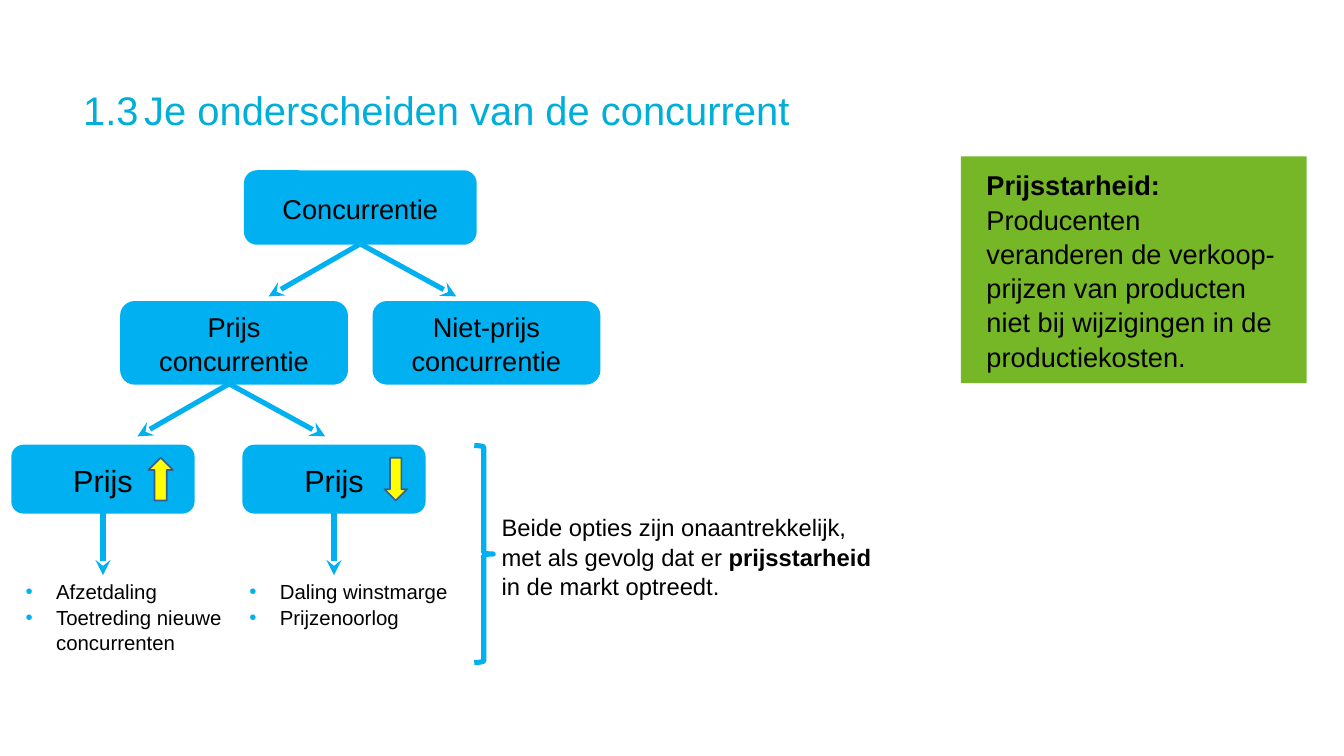
from dataclasses import dataclass

from lxml.etree import SubElement
from pptx import Presentation
from pptx.dml.color import RGBColor
from pptx.enum.shapes import MSO_CONNECTOR as Connector, MSO_SHAPE as Shape
from pptx.enum.text import MSO_ANCHOR as Anchor, MSO_AUTO_SIZE as AutoSize, PP_ALIGN as Align
from pptx.oxml.ns import qn
from pptx.util import Inches, Pt


@dataclass(frozen=True)
class Theme:
    font: str = "Arial"
    title: str = "00AEDA"
    blue: str = "00B0F0"
    green: str = "76B728"
    yellow: str = "FFFF00"
    outline: str = "395E89"
    ink: str = "000000"
    title_pt: int = 47
    price_pt: int = 36
    box_pt: int = 32
    note_pt: int = 28
    bullet_pt: int = 24
    line_pt: int = 6
    border_pt: int = 2
    leading: float = 1.05


T = Theme()


def apply(obj, formats):
    for name, value in formats.items():
        setattr(obj, name, value)


def write(sp, paragraphs, size, color=T.ink, align=Align.LEFT, anchor=Anchor.TOP,
          inset=(0.1, 0.05), tab=None, bullets=False, grow=False):
    tf = sp.text_frame
    dx, dy = map(Inches, inset)
    apply(tf, dict(word_wrap=True, vertical_anchor=anchor, margin_left=dx,
                   margin_right=dx, margin_top=dy, margin_bottom=dy,
                   auto_size=AutoSize.SHAPE_TO_FIT_TEXT if grow else AutoSize.NONE))
    for i, runs in enumerate(paragraphs):
        p = tf.add_paragraph() if i else tf.paragraphs[0]
        apply(p, dict(alignment=align, line_spacing=T.leading))
        pPr = p._p.get_or_add_pPr()
        if bullets:
            pPr.set("marL", str(Inches(0.5)))
            pPr.set("indent", str(Inches(-0.5)))
            SubElement(SubElement(pPr, qn("a:buClr")), qn("a:srgbClr"), val=T.blue)
            SubElement(pPr, qn("a:buFont"), typeface=T.font)
            SubElement(pPr, qn("a:buChar"), char="•")
        if tab:
            tabs = SubElement(pPr, qn("a:tabLst"))
            SubElement(tabs, qn("a:tab"), pos=str(Inches(tab)), algn="l")
        for text, bold in runs:
            r = p.add_run()
            r.text = text
            apply(r.font, dict(name=T.font, size=Pt(size), bold=bold))
            r.font.color.rgb = RGBColor.from_string(color)


def add_text(s, box, paragraphs, size, **formats):
    sp = s.shapes.add_textbox(*map(Inches, box))
    write(sp, paragraphs, size, **formats)


def add_block(s, kind, box, fill=None, line=None, width=T.border_pt):
    sp = s.shapes.add_shape(kind, *map(Inches, box))
    sp.shadow.inherit = False
    if fill:
        sp.fill.solid()
        sp.fill.fore_color.rgb = RGBColor.from_string(fill)
    else:
        sp.fill.background()
    if line:
        sp.line.color.rgb = RGBColor.from_string(line)
        sp.line.width = Pt(width)
    else:
        sp.line.fill.background()
    return sp


def add_arrow(s, start, end):
    cn = s.shapes.add_connector(Connector.STRAIGHT, *map(Inches, (*start, *end)))
    cn.line.color.rgb = RGBColor.from_string(T.blue)
    cn.line.width = Pt(T.line_pt)
    SubElement(cn.line._get_or_add_ln(), qn("a:tailEnd"), type="stealth")
    SubElement(cn._element.spPr, qn("a:effectLst"))


def add_node(s, box, lines, size):
    sp = add_block(s, Shape.ROUNDED_RECTANGLE, box, T.blue, T.blue)
    write(sp, [[(line, False)] for line in lines], size,
          align=Align.CENTER, anchor=Anchor.MIDDLE)


def add_fork(s, x, y):
    for dx in (-1.5, 1.57):
        add_arrow(s, (x, y), (x + dx, y + 0.86))


def add_title(s, box):
    add_text(s, box, [[("1.3\tJe onderscheiden van de concurrent", False)]],
             T.title_pt, color=T.title, inset=(0, 0), tab=1)


def add_definition(s, box):
    sp = add_block(s, Shape.RECTANGLE, box, T.green)
    write(sp, [[("Prijsstarheid:", True)],
               [("Producenten veranderen de verkoop-prijzen van producten niet bij "
                 "wijzigingen in de productiekosten.", False)]],
          T.box_pt, anchor=Anchor.MIDDLE, inset=(0.42, 0.42))


def add_competition(s, box):
    x, y, w, h = box
    level_h, node_w, node_h = 2.14, 3.7, 1.34
    top_w, top_h = 3.78, 1.19
    add_fork(s, x + w / 2, y + top_h)
    add_fork(s, x + node_w / 2 - 0.08, y + level_h + node_h)
    add_node(s, (x + (w - top_w) / 2, y, top_w, top_h), ["Concurrentie"], T.box_pt)
    for left, kind in ((x, "Prijs"), (x + w - node_w, "Niet-prijs")):
        add_node(s, (left, y + level_h, node_w, node_h), [kind, "concurrentie"], T.box_pt)


def add_price_branch(s, box, kind, arrow_box, bullet_dx, effects):
    x, y, w, h = box
    node_h, drop = 1.1, 1.02
    dx, arrow_w = arrow_box
    add_node(s, (x, y, w, node_h), ["Prijs"], T.price_pt)
    add_block(s, kind, (x + dx, y + 0.2, arrow_w, 0.7), T.yellow, T.outline)
    add_arrow(s, (x + w / 2, y + node_h), (x + w / 2, y + node_h + drop))
    text_y = node_h + drop
    add_text(s, (x + bullet_dx, y + text_y, 3.85, h - text_y),
             [[(effect, False)] for effect in effects],
             T.bullet_pt, bullets=True, grow=True)


def add_conclusion(s, box):
    x, y, w, h = box
    brace_w, text_dx, text_h = 0.31, 0.35, 1.51
    add_block(s, Shape.RIGHT_BRACE, (x, y, brace_w, h), line=T.blue, width=T.line_pt)
    add_text(s, (x + text_dx, y + (h - text_h) / 2, w - text_dx, text_h),
             [[("Beide opties zijn onaantrekkelijk, met als gevolg dat er ", False),
               ("prijsstarheid", True), (" in de markt optreedt.", False)]],
             T.note_pt, grow=True)


def main():
    prs = Presentation()
    apply(prs, dict(slide_width=Inches(21.99), slide_height=Inches(12.37)))
    s = prs.slides.add_slide(prs.slide_layouts[6])
    add_title(s, (1.36, 1.36, 19.25, 0.91))
    add_definition(s, (15.72, 2.56, 5.66, 3.71))
    add_competition(s, (1.98, 2.8, 7.83, 3.48))
    add_price_branch(s, (0.2, 7.29, 2.97, 3.43), Shape.UP_ARROW, (2.23, 0.4), 0.12,
                     ["Afzetdaling", "Toetreding nieuwe concurrenten"])
    add_price_branch(s, (3.98, 7.29, 2.97, 3.03), Shape.DOWN_ARROW, (2.31, 0.37), 0,
                     ["Daling winstmarge", "Prijzenoorlog"])
    add_conclusion(s, (7.76, 7.29, 6.65, 3.55))
    prs.save("out.pptx")


if __name__ == "__main__":
    main()
